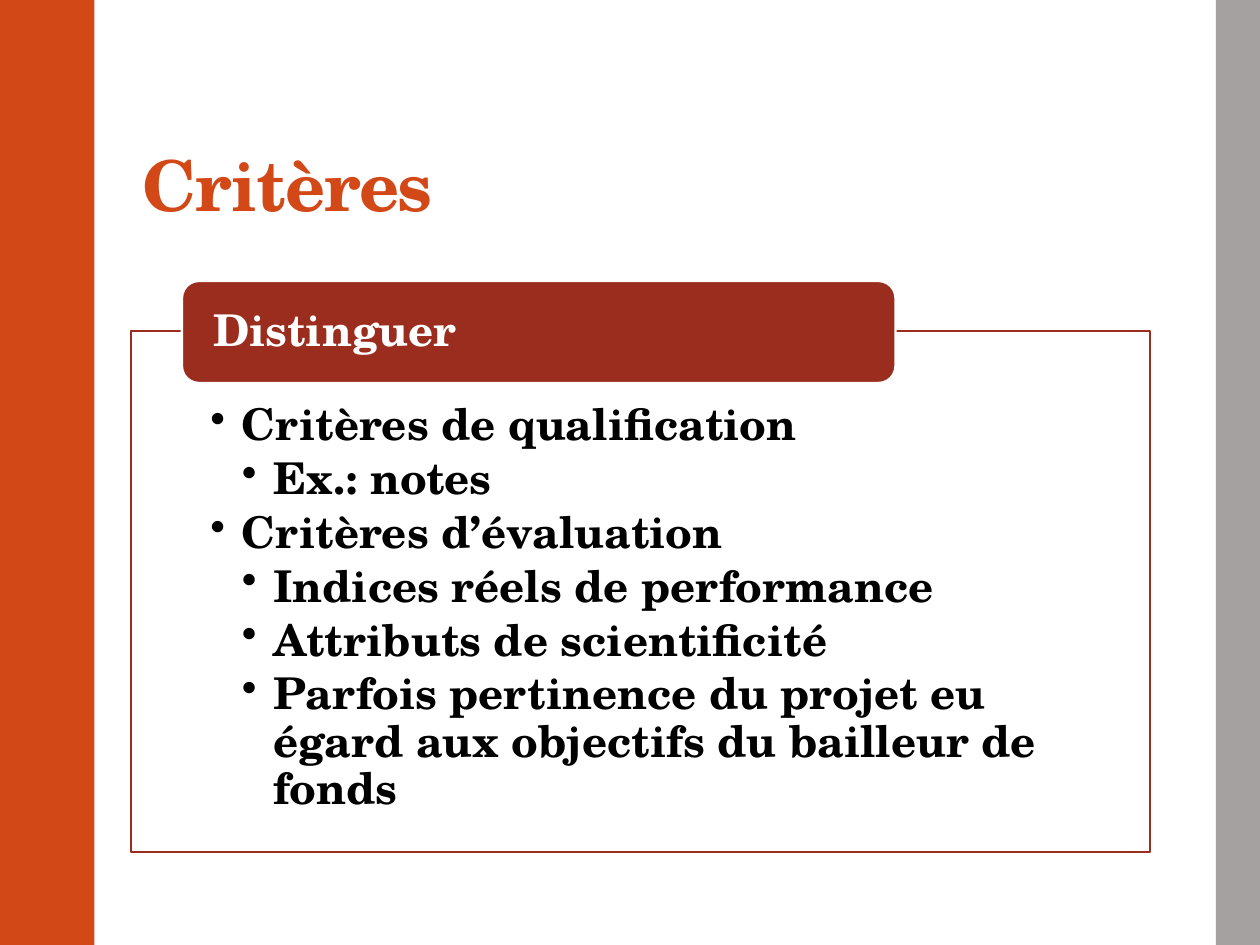
from pptx import Presentation
from pptx.dml.color import RGBColor
from pptx.enum.shapes import MSO_SHAPE as Shape
from pptx.enum.text import MSO_ANCHOR as Anchor, MSO_AUTO_SIZE as AutoSize, PP_ALIGN as Align
from pptx.oxml.ns import qn
from pptx.util import Inches, Pt
from lxml.etree import SubElement

WIDTH, HEIGHT = 10, 7.5
FONT = "TeX Gyre Schola"
ORANGE, GREY, RED, WHITE, BLACK = "D34817", "A6A1A1", "9B2D1F", "FFFFFF", "000000"
TITLE = "Critères"
HEADING = "Distinguer"
CRITERIA = [
    (1, "Critères de qualification"),
    (2, "Ex.: notes"),
    (1, "Critères d’évaluation"),
    (2, "Indices réels de performance"),
    (2, "Attributs de scientificité"),
    (2, "Parfois pertinence du projet eu égard aux objectifs du bailleur de fonds"),
]
LEFT, COLUMN = 1.04, 8.09
INDENT = 0.25
BARS = [(0, 0.75, ORANGE), (9.65, 0.35, GREY)]
FRAME = (LEFT, 2.63, COLUMN, 4.13)
TAB = (LEFT + 0.05 * COLUMN, 2.23, 0.7 * COLUMN, 0.81)


def color(value):
    """Turn a hex string into a colour."""
    return RGBColor.from_string(value)


def apply(target, values):
    """Set each named attribute on the target."""
    for name, value in values.items():
        setattr(target, name, value)


def place(box):
    """Give a box in inches as position and size attributes."""
    return dict(zip(("left", "top", "width", "height"), map(Inches, box)))


def add_block(slide, kind, box, fill, line=None, weight=0):
    """Add a filled shape with an optional outline."""
    shape = slide.shapes.add_shape(kind, **place(box))
    shape.shadow.inherit = False
    shape.fill.solid()
    shape.fill.fore_color.rgb = color(fill)
    if line:
        shape.line.color.rgb = color(line)
        shape.line.width = Pt(weight)
    else:
        shape.line.fill.background()
    return shape


def write(shape, texts, size, ink, anchor, margins, after=0):
    """Write bold left-aligned paragraphs into a shape."""
    frame = shape.text_frame
    sides = ("margin_left", "margin_top", "margin_right", "margin_bottom")
    apply(frame, {"word_wrap": True, "auto_size": AutoSize.NONE, "vertical_anchor": anchor,
                  **dict(zip(sides, map(Inches, margins)))})
    for index, text in enumerate(texts):
        paragraph = frame.add_paragraph() if index else frame.paragraphs[0]
        apply(paragraph, {"alignment": Align.LEFT, "line_spacing": 0.9, "space_after": Pt(after)})
        run = paragraph.add_run()
        run.text = text
        apply(run.font, {"name": FONT, "size": Pt(size), "bold": True})
        run.font.color.rgb = color(ink)
    return frame.paragraphs


def add_bullet(paragraph, level):
    """Give a paragraph a hanging bullet at its level."""
    paragraph.level = level
    properties = paragraph._p.get_or_add_pPr()
    properties.set("marL", str(Inches(level * INDENT)))
    properties.set("indent", str(-Inches(INDENT)))
    SubElement(properties, qn("a:buChar"), char="•")


def main():
    """Build the criteria slide."""
    presentation = Presentation()
    apply(presentation, {"slide_width": Inches(WIDTH), "slide_height": Inches(HEIGHT)})
    slide = presentation.slides.add_slide(presentation.slide_layouts[5])

    title = slide.shapes.title
    apply(title, place((1.03, 0.32, COLUMN, 1.53)))
    heading = write(title, [TITLE], 40, ORANGE, Anchor.BOTTOM, (0.1, 0.05, 0.1, 0.05))[0]
    heading.runs[0].font._element.set("spc", "-70")

    for left, width, fill in BARS:
        add_block(slide, Shape.RECTANGLE, (left, 0, width, HEIGHT), fill)

    panel = add_block(slide, Shape.RECTANGLE, FRAME, WHITE, RED, 1.1)
    texts = [text for _, text in CRITERIA]
    paragraphs = write(panel, texts, 25, BLACK, Anchor.TOP, (0.63, 0.57, 0.63, 0.19), 3.75)
    for paragraph, (level, _) in zip(paragraphs, CRITERIA):
        add_bullet(paragraph, level)

    tab = add_block(slide, Shape.ROUNDED_RECTANGLE, TAB, RED, WHITE, 1.35)
    write(tab, [HEADING], 25, WHITE, Anchor.MIDDLE, (0.21, 0, 0.21, 0))

    presentation.save("out.pptx")


if __name__ == "__main__":
    main()
